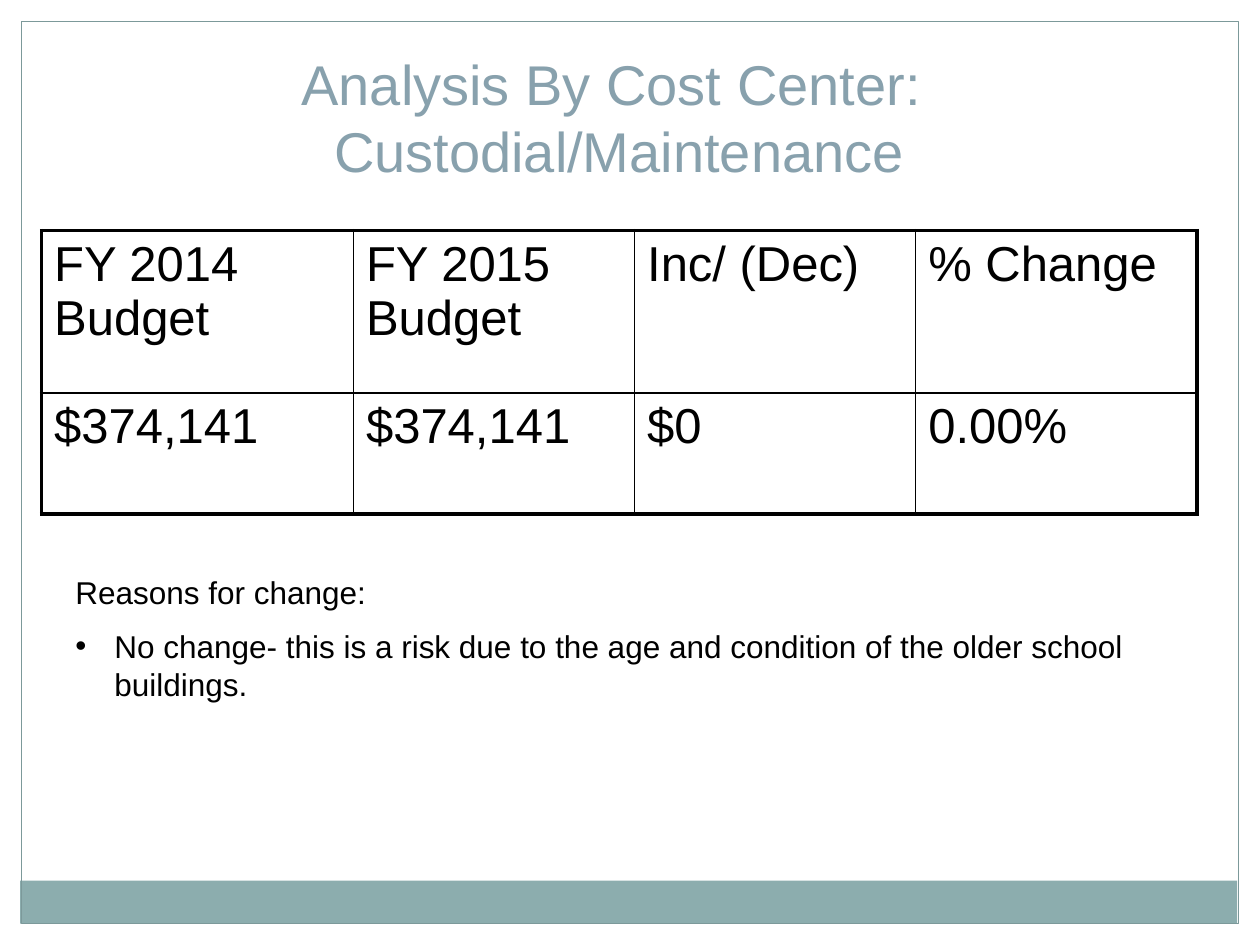
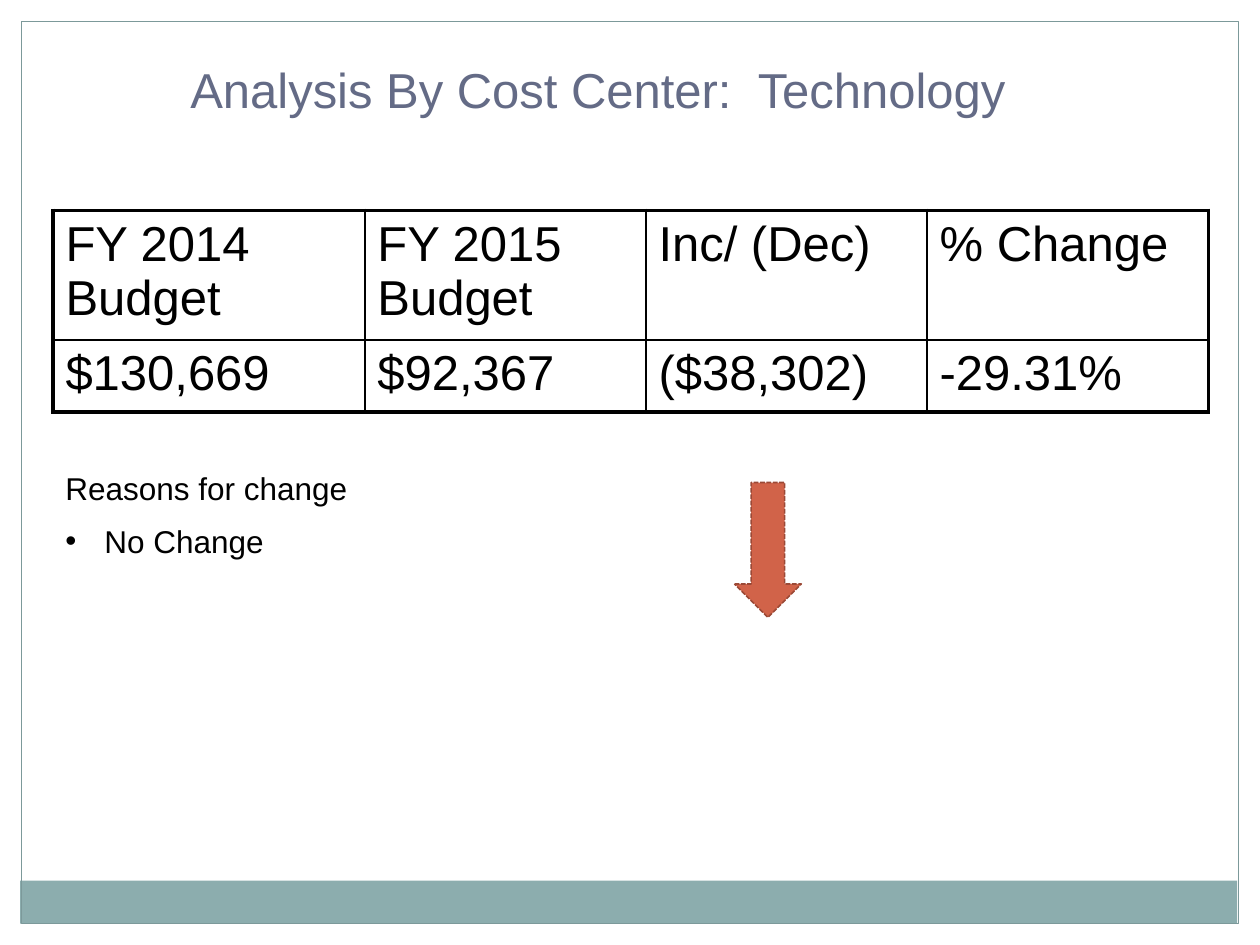
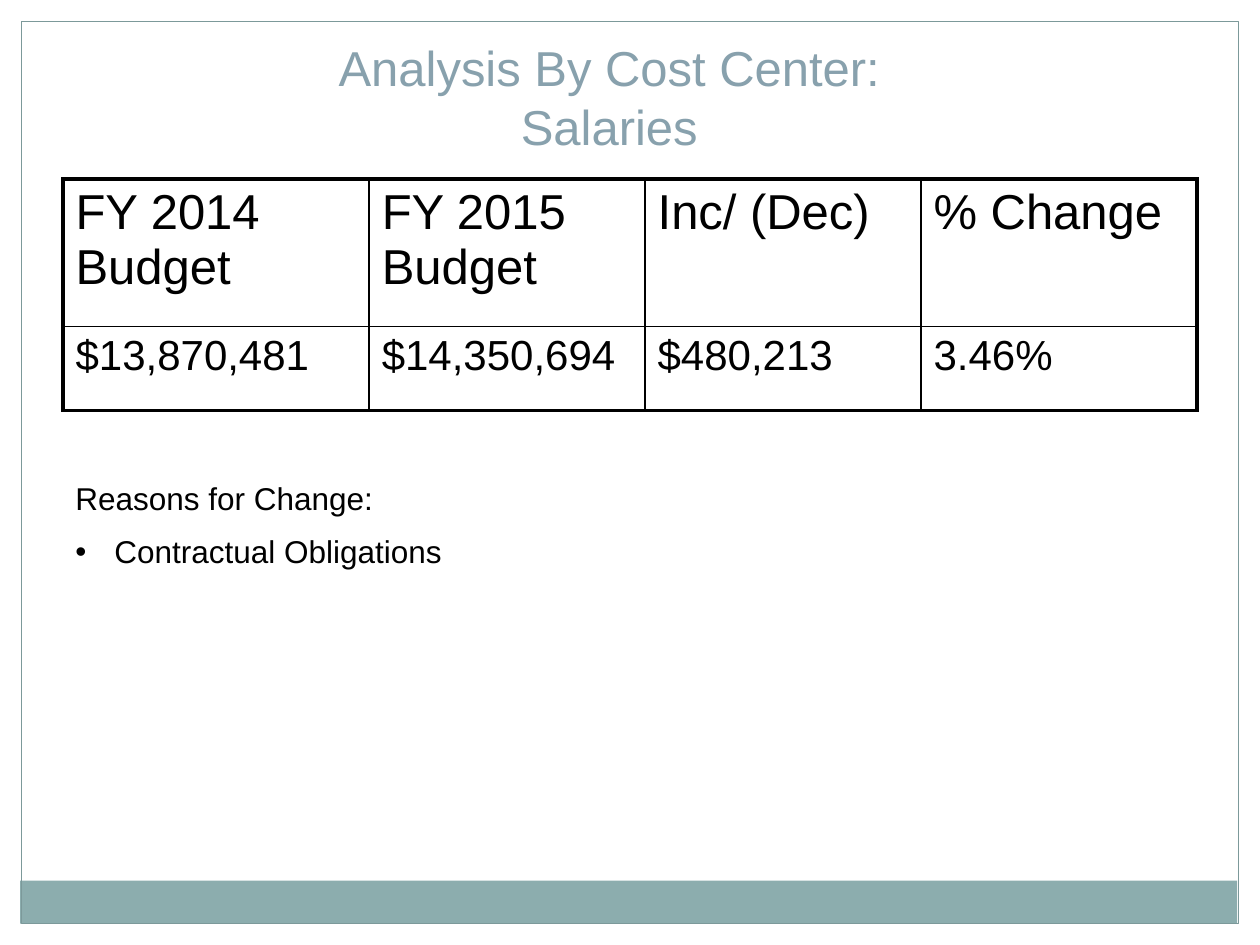
from dataclasses import dataclass
from typing import Optional

from lxml.etree import SubElement
from pptx import Presentation
from pptx.dml.color import RGBColor
from pptx.enum.dml import MSO_LINE
from pptx.enum.shapes import MSO_SHAPE as Preset
from pptx.enum.text import MSO_ANCHOR as Anchor, MSO_AUTO_SIZE as AutoSize, PP_ALIGN as Align
from pptx.oxml import parse_xml
from pptx.oxml.ns import nsdecls, qn
from pptx.util import Inches, Pt


@dataclass(frozen=True)
class Theme:
    font: str = "Arial"
    text: str = "000000"
    paper: str = "FFFFFF"
    band: str = "8CADAE"
    frame: str = "7C999A"
    title: str = "88A1AD"
    title_dark: str = "646B86"
    arrow: str = "D16349"
    arrow_line: str = "9B4936"
    title_size: float = 28
    title_large: float = 32
    table_size: float = 28
    table_small: float = 24
    reason_size: float = 18
    outer_border: float = 2.25
    inner_border: float = 1


THEME = Theme()
FIRST_COLUMN_SHARE = 0.27
BULLET_INDENT = Inches(0.31)


@dataclass(frozen=True)
class Area:
    left: float
    top: float
    width: float
    height: float

    def lengths(self) -> list:
        return [Inches(value) for value in (self.left, self.top, self.width, self.height)]


@dataclass(frozen=True)
class Block:
    """A filled or outlined preset shape."""
    area: Area
    fill: Optional[str] = None
    line: Optional[str] = None
    line_width: float = 0.75
    preset: Preset = Preset.RECTANGLE
    dash: Optional[MSO_LINE] = None


@dataclass(frozen=True)
class Title:
    text: str
    area: Area
    color: str = THEME.title
    size: float = THEME.title_size
    anchor: Anchor = Anchor.TOP


@dataclass(frozen=True)
class BudgetTable:
    area: Area
    row_heights: tuple
    values: tuple
    first_heading: str = "FY 2014  Budget"
    value_size: float = THEME.table_size


@dataclass(frozen=True)
class Reasons:
    area: Area
    heading: str
    reason: str


@dataclass(frozen=True)
class CostCenter:
    title: Title
    table: BudgetTable
    reasons: Reasons
    arrow: Optional[Block] = None


FRAME = (
    Block(Area(0, 0, 10, 0.17), THEME.paper),
    Block(Area(9.83, 0, 0.17, 7.5), THEME.paper),
    Block(Area(0, 0, 0.17, 7.5), THEME.paper),
    Block(Area(0.16, 6.99, 9.66, 0.34), THEME.band),
    Block(Area(0.17, 0.17, 9.66, 7.16), line=THEME.frame),
)

COST_CENTERS = (
    CostCenter(
        Title("Analysis By Cost Center:  Custodial/Maintenance", Area(0.25, 0.3, 9.33, 1.25),
              size=THEME.title_large, anchor=Anchor.MIDDLE),
        BudgetTable(Area(0.33, 1.83, 9.17, 2.25), (1.29, 0.96),
                    ("$374,141", "$374,141", "$0", "0.00%")),
        Reasons(Area(0.5, 4.5, 8.83, 1.15), "Reasons for change:",
                "No change- this is a risk due to the age and condition "
                "of the older school buildings."),
    ),
    CostCenter(
        Title("Analysis By Cost Center:  Technology", Area(0.83, 0.42, 7.83, 0.57),
              color=THEME.title_dark),
        BudgetTable(Area(0.42, 1.67, 9.17, 1.6), (1.03, 0.57),
                    ("$130,669", "$92,367", "($38,302)", "-29.31%")),
        Reasons(Area(0.42, 3.67, 9.08, 0.86), "Reasons for change", "No Change"),
        Block(Area(5.83, 3.83, 0.53, 1.07), THEME.arrow, THEME.arrow_line, 0.9,
              Preset.DOWN_ARROW, MSO_LINE.SQUARE_DOT),
    ),
    CostCenter(
        Title("Analysis By Cost Center:\nSalaries", Area(0.42, 0.25, 8.83, 1.03)),
        BudgetTable(Area(0.5, 1.42, 9, 1.83), (1.17, 0.67),
                    ("$13,870,481", "$14,350,694", "$480,213", "3.46%"),
                    "FY 2014 Budget", THEME.table_small),
        Reasons(Area(0.5, 3.75, 8.92, 0.86), "Reasons for Change:", "Contractual Obligations"),
    ),
)


def rgb(color: str) -> RGBColor:
    return RGBColor.from_string(color)


def format_text(frame, size: float, color: str = THEME.text) -> None:
    for paragraph in frame.paragraphs:
        for span in paragraph.runs:
            span.font.name = THEME.font
            span.font.size = Pt(size)
            span.font.color.rgb = rgb(color)


def space_before(paragraph, percent: int) -> None:
    """Set the space above a paragraph relative to its type size."""
    spacing = parse_xml(f'<a:spcBef {nsdecls("a")}><a:spcPct val="{percent * 1000}"/></a:spcBef>')
    paragraph._p.get_or_add_pPr().insert(0, spacing)


def add_bullet(paragraph) -> None:
    properties = paragraph._p.get_or_add_pPr()
    properties.set("marL", str(BULLET_INDENT))
    properties.set("indent", str(-BULLET_INDENT))
    SubElement(properties, qn("a:buFont")).set("typeface", THEME.font)
    SubElement(properties, qn("a:buChar")).set("char", "•")


def set_border(cell, side: str, width: float) -> None:
    cell._tc.get_or_add_tcPr().append(parse_xml(
        f'<a:ln{side} {nsdecls("a")} w="{Pt(width)}"><a:solidFill>'
        f'<a:srgbClr val="{THEME.text}"/></a:solidFill></a:ln{side}>'))


def draw_block(page, block: Block):
    shape = page.shapes.add_shape(block.preset, *block.area.lengths())
    shape.shadow.inherit = False
    if block.fill:
        shape.fill.solid()
        shape.fill.fore_color.rgb = rgb(block.fill)
    else:
        shape.fill.background()
    if block.line:
        shape.line.color.rgb = rgb(block.line)
        shape.line.width = Pt(block.line_width)
        if block.dash:
            shape.line.dash_style = block.dash
    else:
        shape.line.fill.background()
    return shape


def move_frame_to_layout(page) -> None:
    """Draw the frame once and hand it to the layout that all pages share."""
    for position, block in enumerate(FRAME, start=2):
        shape = draw_block(page, block)
        page.slide_layout.shapes.element.insert(position, shape.element)


def draw_title(page, title: Title) -> None:
    box = page.shapes.title
    box.left, box.top, box.width, box.height = title.area.lengths()
    frame = box.text_frame
    frame.text = title.text
    frame.word_wrap = True
    frame.auto_size = AutoSize.NONE
    frame.vertical_anchor = title.anchor
    for paragraph in frame.paragraphs:
        paragraph.alignment = Align.CENTER
    format_text(frame, title.size, title.color)


def draw_table(page, budget: BudgetTable) -> None:
    headings = (budget.first_heading, "FY 2015 Budget", "Inc/ (Dec)", "% Change")
    rows = ((headings, THEME.table_size), (budget.values, budget.value_size))
    last_row, last_column = len(rows) - 1, len(headings) - 1
    table = page.shapes.add_table(len(rows), len(headings), *budget.area.lengths()).table
    table.first_row = table.horz_banding = False

    first_width = budget.area.width * FIRST_COLUMN_SHARE
    other_width = (budget.area.width - first_width) / last_column
    for index, column in enumerate(table.columns):
        column.width = Inches(other_width if index else first_width)

    for row_index, (texts, size) in enumerate(rows):
        table.rows[row_index].height = Inches(budget.row_heights[row_index])
        for column_index, text in enumerate(texts):
            cell = table.cell(row_index, column_index)
            cell.text_frame.text = text
            space_before(cell.text_frame.paragraphs[0], 20)
            format_text(cell.text_frame, size)
            is_outer = {"L": column_index == 0, "R": column_index == last_column,
                        "T": row_index == 0, "B": row_index == last_row}
            for side, outer in is_outer.items():
                set_border(cell, side, THEME.outer_border if outer else THEME.inner_border)
            cell.fill.background()


def draw_reasons(page, reasons: Reasons) -> None:
    frame = page.shapes.add_textbox(*reasons.area.lengths()).text_frame
    frame.word_wrap = True
    frame.auto_size = AutoSize.SHAPE_TO_FIT_TEXT
    frame.text = f"{reasons.heading}\n{reasons.reason}"
    for paragraph in frame.paragraphs:
        space_before(paragraph, 50)
    add_bullet(frame.paragraphs[1])
    format_text(frame, THEME.reason_size)


def main() -> None:
    deck = Presentation()
    deck.slide_width, deck.slide_height = Inches(10), Inches(7.5)
    title_only = deck.slide_layouts.get_by_name("Title Only")
    for index, center in enumerate(COST_CENTERS):
        page = deck.slides.add_slide(title_only)
        if index == 0:
            move_frame_to_layout(page)
        draw_title(page, center.title)
        draw_table(page, center.table)
        draw_reasons(page, center.reasons)
        if center.arrow:
            draw_block(page, center.arrow)
    deck.save("out.pptx")


if __name__ == "__main__":
    main()
